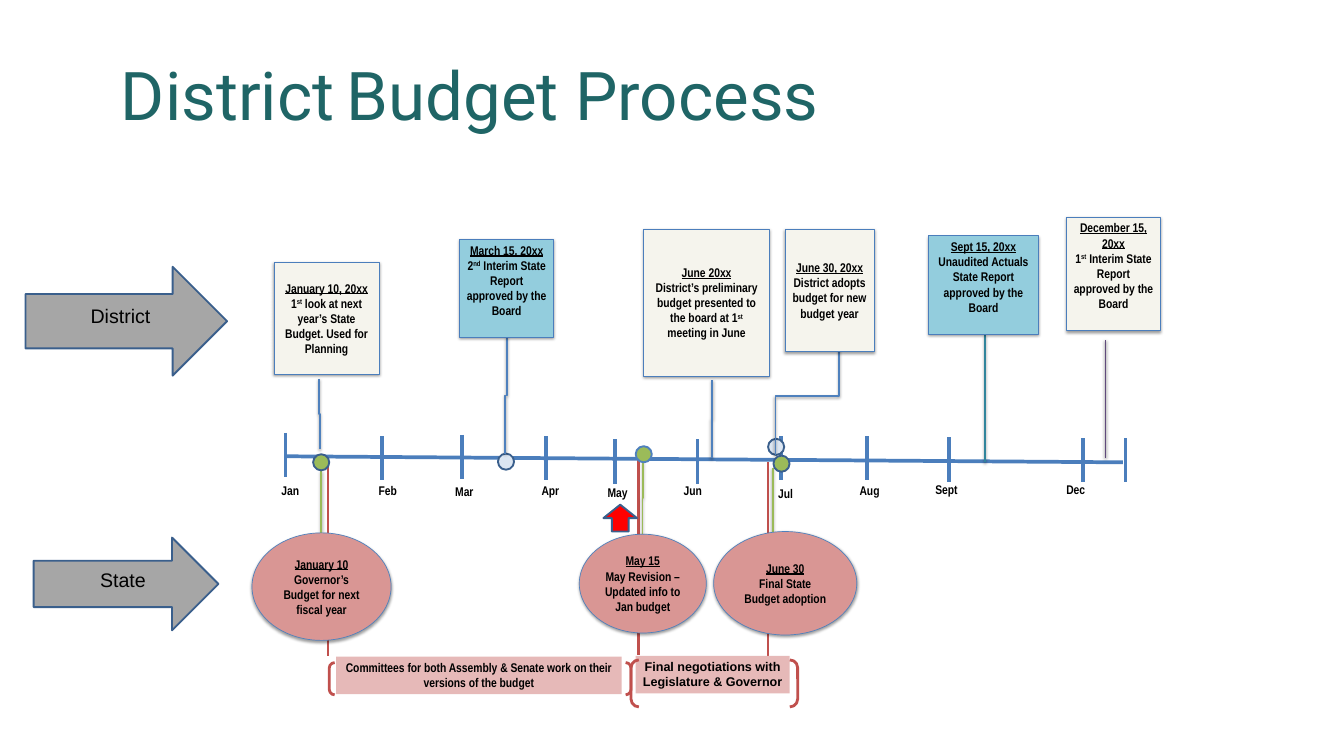
import collections

import lxml.etree
import pptx
import pptx.dml.color
import pptx.enum.shapes
import pptx.enum.text
import pptx.oxml.ns
import pptx.util

RGBColor = pptx.dml.color.RGBColor
SHAPE = pptx.enum.shapes.MSO_SHAPE
CONNECTOR = pptx.enum.shapes.MSO_CONNECTOR
ALIGN = pptx.enum.text.PP_ALIGN
ANCHOR = pptx.enum.text.MSO_ANCHOR
FIT = pptx.enum.text.MSO_AUTO_SIZE
Pt = pptx.util.Pt
qn = pptx.oxml.ns.qn

TEAL = RGBColor(0x1F, 0x65, 0x66)
BLACK = RGBColor(0, 0, 0)
AXIS = RGBColor(0x4B, 0x7E, 0xBC)
BLUE = RGBColor(0x4F, 0x81, 0xBD)
NAVY = RGBColor(0x3A, 0x5F, 0x8C)
PALE = RGBColor(0xDC, 0xE6, 0xF2)
AQUA = RGBColor(0x93, 0xCD, 0xDD)
DARK_AQUA = RGBColor(0x31, 0x85, 0x9C)
PURPLE = RGBColor(0x60, 0x4A, 0x7B)
CREAM = RGBColor(0xF5, 0xF4, 0xED)
GREEN = RGBColor(0x9B, 0xBB, 0x59)
DARK_RED = RGBColor(0xC0, 0x50, 0x4D)
RED = RGBColor(0xFF, 0, 0)
ROSE = RGBColor(0xD9, 0x96, 0x94)
PINK = RGBColor(0xE6, 0xB9, 0xB8)
GRAY = RGBColor(0xA6, 0xA6, 0xA6)

COLS, ROWS = 20, 11.25
prs = pptx.Presentation()
prs.slide_width = pptx.util.Inches(COLS)
prs.slide_height = pptx.util.Inches(ROWS)
COL, ROW = prs.slide_width / COLS, prs.slide_height / ROWS

Box = collections.namedtuple("Box", "left top width height")
LABEL = {"name": "Arial Narrow", "size": Pt(13.5), "bold": True}
HEADING = {"name": "Arial", "size": Pt(21)}
GROW = {"word_wrap": True, "auto_size": FIT.SHAPE_TO_FIT_TEXT, "vertical_anchor": ANCHOR.TOP}
MIDDLE = {"word_wrap": True, "auto_size": FIT.NONE, "vertical_anchor": ANCHOR.MIDDLE}


def set_format(obj, values):
    for name, value in values.items():
        setattr(obj, name, value)


def at(box, c, r):
    return round((box.left + c) * COL), round((box.top + r) * ROW)


def frame(box, c, r, w, h):
    return (*at(box, c, r), round(w * COL), round(h * ROW))


def add_effects(obj, shadow):
    sp_pr = obj._element.spPr
    effects = sp_pr.find(qn("a:effectLst"))
    if effects is None:
        effects = lxml.etree.SubElement(sp_pr, qn("a:effectLst"))
    if shadow:
        outer = lxml.etree.SubElement(effects, qn("a:outerShdw"), blurRad=str(Pt(3.1)),
                                      dist=str(Pt(1.6)), dir="5400000", rotWithShape="0")
        color = lxml.etree.SubElement(outer, qn("a:srgbClr"), val="000000")
        lxml.etree.SubElement(color, qn("a:alpha"), val="38000")


def add_shape(s, box, kind, place, fill=None, line=None, width=0.75, shadow=False):
    sp = s.shapes.add_shape(kind, *frame(box, *place))
    if fill is None:
        sp.fill.background()
    else:
        sp.fill.solid()
        sp.fill.fore_color.rgb = fill
    if line is None:
        sp.line.fill.background()
    else:
        sp.line.color.rgb = line
        sp.line.width = Pt(width)
    sp.shadow.inherit = False
    add_effects(sp, shadow)
    return sp


def add_line(s, box, start, end, color, width):
    cx = s.shapes.add_connector(CONNECTOR.STRAIGHT, *at(box, *start), *at(box, *end))
    cx.line.color.rgb = color
    cx.line.width = Pt(width)
    add_effects(cx, False)


def add_elbow(s, box, start, end, color, width=2):
    (x1, y1), (x2, y2) = at(box, *start), at(box, *end)
    mx, my = (x1 + x2) // 2, (y1 + y2) // 2
    cx = s.shapes.add_connector(CONNECTOR.ELBOW, mx + y1 - my, my - x1 + mx,
                                mx + y2 - my, my - x2 + mx)
    cx._element.spPr.find(qn("a:xfrm")).set("rot", "5400000")
    cx.line.color.rgb = color
    cx.line.width = Pt(width)
    add_effects(cx, True)


def add_run(p, text, font, color=BLACK):
    r = p.add_run()
    r.text = text
    set_format(r.font, font)
    r.font.color.rgb = color
    return r


def write(sp, body, heading=None, font=LABEL, layout=GROW, align=ALIGN.CENTER, broken=False):
    tf = sp.text_frame
    set_format(tf, layout)
    p = tf.paragraphs[0]
    if heading:
        add_run(p, heading, {**font, "underline": True})
        if broken:
            p.add_line_break()
        else:
            p.alignment = align
            p = tf.add_paragraph()
    p.alignment = align
    for i, part in enumerate(body.split("^")):
        r = add_run(p, part, font)
        if i % 2:
            r.font._element.set("baseline", "30000")


def add_label(s, box, place, text, font=LABEL, align=ALIGN.CENTER):
    write(s.shapes.add_textbox(*frame(box, *place)), text, font=font, align=align)


def add_title(s, box):
    sp = s.shapes.title
    set_format(sp, dict(zip(("left", "top", "width", "height"),
                            frame(box, 0, 0, box.width, box.height))))
    tf = sp.text_frame
    set_format(tf, {**MIDDLE, "margin_bottom": round(0.4 * ROW)})
    p = tf.paragraphs[0]
    set_format(p, {"alignment": ALIGN.LEFT, "line_spacing": 1.2})
    for text, size in (("District", 72), (" ", 54), ("Budget Process", 72)):
        add_run(p, text, {"name": "Roboto", "size": Pt(size)}, TEAL)


def add_state(s, box):
    for x, top, bottom in ((11.43, 0.88, 3.82), (9.5, 0.81, 3.75), (4.88, 0.81, 3.76)):
        add_line(s, box, (x, top), (x, bottom), DARK_RED, 3)
    for start, end, width in (((4.78, 1.93), (4.78, 1), 2),
                              ((9.56, 1.95), (9.57, 0.87), 1.5),
                              ((11.5, 1.91), (11.5, 0.96), 2)):
        add_elbow(s, box, start, end, GREEN, width)
    for place, heading, body, broken in (
            ((3.75, 1.93, 2.07, 1.6), "January 10", "Governor’s Budget for next fiscal year", True),
            ((8.62, 1.95, 1.89, 1.47), "May 15", "May Revision – Updated info to Jan budget", True),
            ((10.62, 1.91, 2.13, 1.54), "June 30", "Final State Budget adoption", False)):
        sp = add_shape(s, box, SHAPE.OVAL, place, ROSE, BLUE, shadow=True)
        write(sp, body, heading, layout=MIDDLE, broken=broken)
    add_shape(s, box, SHAPE.RIGHT_ARROW, (0.5, 2, 2.75, 1.38), GRAY, NAVY, 2)
    add_label(s, box, (1.39, 2.4, 1.88, 0.45), "State", HEADING, ALIGN.LEFT)
    add_shape(s, box, SHAPE.UP_ARROW, (8.98, 1.51, 0.5, 0.4), RED, NAVY, 2)


def add_legislature(s, box):
    for place, bracket, text, font in (
            ((1, 0.77, 4.25, 0.56), (0.9, 0.86, 4.49, 0.48),
             "Committees for both Assembly & Senate work on their versions of the budget", LABEL),
            ((5.46, 0.76, 2.29, 0.56), (5.39, 0.82, 2.48, 0.7),
             "Final negotiations with Legislature & Governor", {**LABEL, "name": "Arial"})):
        write(add_shape(s, box, SHAPE.RECTANGLE, place, PINK), text, font=font)
        add_shape(s, box, SHAPE.DOUBLE_BRACKET, bracket, line=DARK_RED, width=3)


def add_timeline(s, box):
    add_line(s, box, (0.25, 0.79), (12.71, 0.88), AXIS, 4)
    for x, top in ((0.25, 0.44), (1.69, 0.49), (2.88, 0.47), (4.12, 0.49), (5.15, 0.54),
                   (6.38, 0.54), (7.62, 0.49), (8.9, 0.49), (10.12, 0.51), (12.12, 0.52),
                   (12.75, 0.52)):
        add_line(s, box, (x, top), (x, top + 0.66), AXIS, 4)
    for month, x, y in (("Jan", 0.01, 1.13), ("Feb", 1.46, 1.14), ("Mar", 2.6, 1.15),
                        ("Apr", 3.88, 1.13), ("May", 4.88, 1.16), ("Jun", 6, 1.13),
                        ("Jul", 7.38, 1.18), ("Aug", 8.63, 1.13)):
        add_label(s, box, (x, y, 0.62, 0.33), month)
    for month, x, width in (("Sept", 9.82, 0.81), ("Dec", 11.77, 0.73)):
        add_label(s, box, (x, 1.12, width, 0.33), month, align=ALIGN.LEFT)
    for x, y, fill, line in ((7.51, 0.78, GREEN, NAVY), (0.66, 0.76, GREEN, NAVY),
                             (5.46, 0.64, GREEN, BLUE), (7.43, 0.53, PALE, NAVY),
                             (3.41, 0.75, PALE, NAVY)):
        add_shape(s, box, SHAPE.OVAL, (x, y, 0.24, 0.24), fill, line, 2)


def add_district(s, box):
    for start, end, color in (((10.6, 2.66), (10.59, 3.82), BLUE),
                              ((7.54, 2.02), (7.52, 3.75), BLUE),
                              ((12.48, 2.02), (11.54, 3.77), BLUE),
                              ((4.75, 2.64), (4.76, 3.68), BLUE),
                              ((14.66, 1.99), (14.66, 3.88), DARK_AQUA),
                              ((16.45, 2.06), (16.45, 3.81), PURPLE)):
        add_elbow(s, box, start, end, color)
    for place, fill, layout, heading, body in (
            ((4.08, 0.9, 1.56, 1.67), CREAM, MIDDLE, "January 10, 20xx",
             "1^st^ look at next year’s State Budget. Used for Planning"),
            ((6.84, 0.56, 1.4, 1.46), AQUA, GROW, "March 15, 20xx",
             "2^nd^ Interim State Report approved by the Board"),
            ((9.58, 0.41, 1.87, 2.19), CREAM, MIDDLE, "June 20xx",
             "District’s preliminary budget presented to the board at 1^st^ meeting in June"),
            ((11.68, 0.41, 1.33, 1.82), CREAM, MIDDLE, "June 30, 20xx",
             "District adopts budget for new budget year"),
            ((13.82, 0.51, 1.63, 1.46), AQUA, GROW, "Sept 15, 20xx",
             "Unaudited Actuals State Report approved by the Board"),
            ((15.87, 0.23, 1.4, 1.69), CREAM, GROW, "December 15, 20xx",
             "1^st^ Interim State Report approved by the Board")):
        sp = add_shape(s, box, SHAPE.RECTANGLE, place, fill, AXIS, shadow=True)
        write(sp, body, heading, layout=layout)
    add_shape(s, box, SHAPE.RIGHT_ARROW, (0.38, 0.97, 3, 1.62), GRAY, NAVY, 2)
    add_label(s, box, (1.25, 1.47, 2.16, 0.45), "District", HEADING, ALIGN.LEFT)


s = prs.slides.add_slide(prs.slide_layouts[5])
add_title(s, Box(1.7, 0.92, 14.12, 1.07))
add_state(s, Box(0, 6, 13, 4))
add_legislature(s, Box(4, 9, 8, 2))
add_timeline(s, Box(4, 6, 13, 2))
add_district(s, Box(0, 3, 18, 4))
prs.save("out.pptx")
